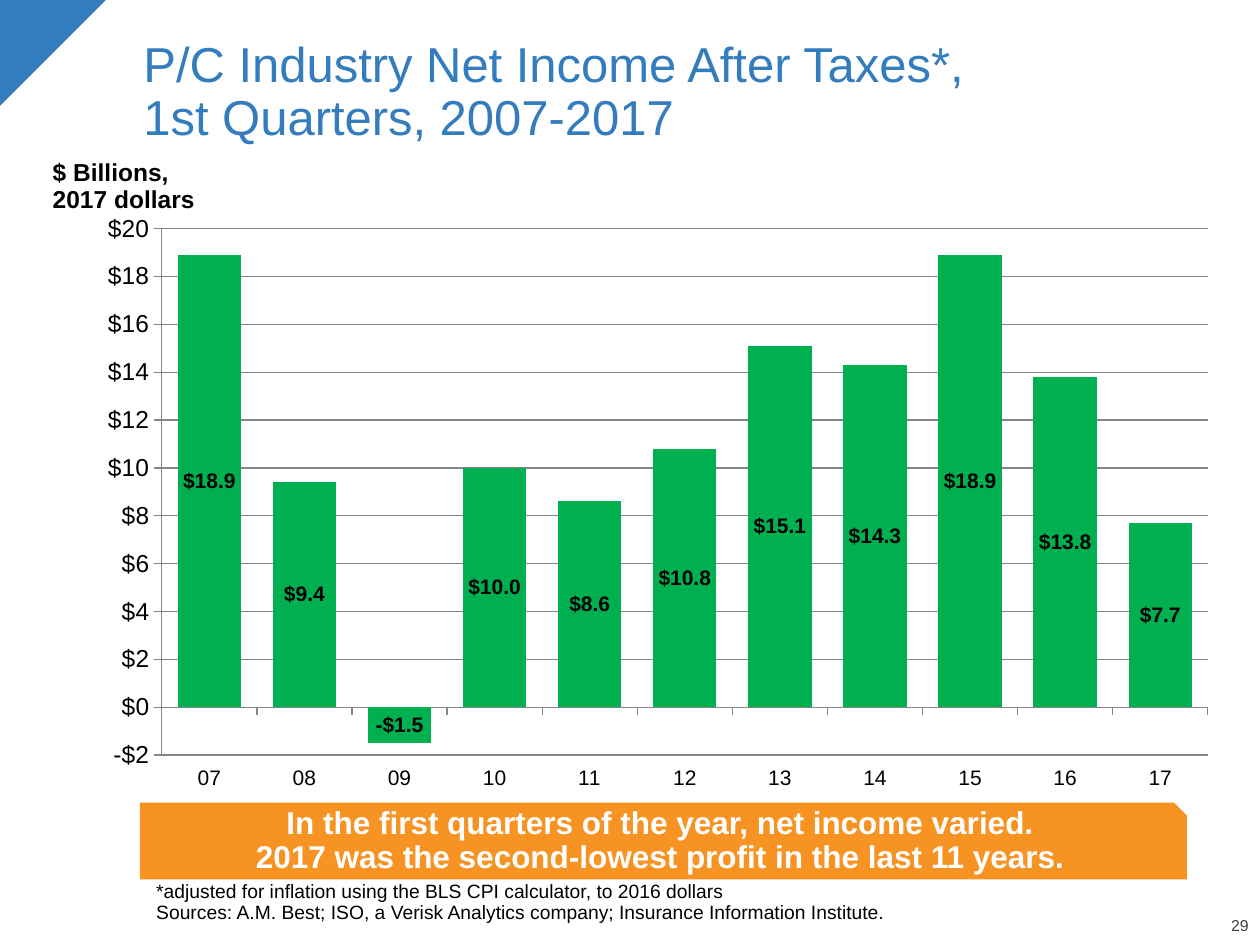
from lxml import etree
from pptx import Presentation
from pptx.chart.data import CategoryChartData
from pptx.dml.color import RGBColor
from pptx.enum.chart import XL_CHART_TYPE, XL_LABEL_POSITION, XL_TICK_LABEL_POSITION, XL_TICK_MARK
from pptx.enum.shapes import MSO_SHAPE
from pptx.enum.text import MSO_ANCHOR, PP_ALIGN
from pptx.oxml.ns import qn
from pptx.util import Pt

PX = 9144  # EMU in one px, 100 px to the inch
FONT = "Arial"

BLUE = RGBColor(0x33, 0x7D, 0xBE)
GREEN = RGBColor(0x00, 0xB0, 0x50)
ORANGE = RGBColor(0xF6, 0x93, 0x22)
BLACK = RGBColor(0x00, 0x00, 0x00)
WHITE = RGBColor(0xFF, 0xFF, 0xFF)
DARK_GRAY = RGBColor(0x40, 0x40, 0x40)
GRID_GRAY = RGBColor(0x86, 0x86, 0x86)

STACKED = XL_CHART_TYPE.COLUMN_STACKED
LABEL_CENTER = XL_LABEL_POSITION.CENTER
LABELS_LOW = XL_TICK_LABEL_POSITION.LOW
TICK_OUT, TICK_NONE = XL_TICK_MARK.OUTSIDE, XL_TICK_MARK.NONE
TRIANGLE, SNIPPED = MSO_SHAPE.RIGHT_TRIANGLE, MSO_SHAPE.SNIP_1_RECTANGLE
MIDDLE, BOTTOM = MSO_ANCHOR.MIDDLE, MSO_ANCHOR.BOTTOM
LEFT, CENTER, RIGHT = PP_ALIGN.LEFT, PP_ALIGN.CENTER, PP_ALIGN.RIGHT

YEARS = [f"{year:02d}" for year in range(7, 18)]
NET_INCOME = [18.9, 9.4, -1.5, 10.0, 8.6, 10.8, 15.1, 14.3, 18.9, 13.8, 7.7]
PLOT_LAYOUT = {"x": 0.103, "y": 0.028, "w": 0.887, "h": 0.867}


def emu(box):
    return [length * PX for length in box]


def set_text(shape, text, size, color, anchor, align=LEFT, bold=False, insets=(0, 0, 0, 0)):
    frame = shape.text_frame
    frame.word_wrap = True
    frame.vertical_anchor = anchor
    frame.margin_left, frame.margin_top, frame.margin_right, frame.margin_bottom = emu(insets)
    paragraph = frame.paragraphs[0]
    paragraph.text = text
    paragraph.alignment = align
    paragraph.line_spacing = 0.9
    font = paragraph.font
    font.name, font.size, font.bold = FONT, Pt(size), bold
    font.color.rgb = color


def add_text(slide, box, *args, **options):
    set_text(slide.shapes.add_textbox(*emu(box)), *args, **options)


def add_filled_shape(slide, kind, box, color):
    shape = slide.shapes.add_shape(kind, *emu(box))
    shape.shadow.inherit = False
    shape.fill.solid()
    shape.fill.fore_color.rgb = color
    shape.line.fill.background()
    return shape


def add_corner(slide, box):
    add_filled_shape(slide, TRIANGLE, box, BLUE).rotation = 90


def add_callout(slide, box, text):
    shape = add_filled_shape(slide, SNIPPED, box, ORANGE)
    set_text(shape, text, 18, WHITE, MIDDLE, CENTER, bold=True, insets=(10, 5, 10, 10))


def place_plot(chart):
    plot_area = chart.plots[0]._element.getparent()
    for layout in plot_area.findall(qn("c:layout")):
        plot_area.remove(layout)
    layout = etree.Element(qn("c:layout"))
    plot_area.insert(0, layout)
    manual = etree.SubElement(layout, qn("c:manualLayout"))
    settings = {"layoutTarget": "inner", "xMode": "edge", "yMode": "edge", **PLOT_LAYOUT}
    for name, value in settings.items():
        etree.SubElement(manual, qn(f"c:{name}")).set("val", str(value))


def add_income_chart(slide, box):
    data = CategoryChartData()
    data.categories = YEARS
    data.add_series("Series 1", NET_INCOME)
    chart = slide.shapes.add_chart(STACKED, *emu(box), data).chart
    chart.has_legend = chart.has_title = False
    chart.font.name, chart.font.size = FONT, Pt(12)
    chart.font.color.rgb = BLACK
    place_plot(chart)

    # Columns and their labels
    plot = chart.plots[0]
    plot.gap_width, plot.overlap = 50, 100
    plot.vary_by_categories = False
    series = plot.series[0]
    series.invert_if_negative = False
    series.format.fill.solid()
    series.format.fill.fore_color.rgb = GREEN
    labels = series.data_labels
    labels.show_value = True
    labels.position = LABEL_CENTER
    labels.number_format, labels.number_format_is_linked = '"$"#,##0.0', False
    labels.font.name, labels.font.size, labels.font.bold = FONT, Pt(12), True
    labels.font.color.rgb = BLACK

    # Axes
    years, dollars = chart.category_axis, chart.value_axis
    years.tick_label_position = LABELS_LOW
    dollars.minimum_scale, dollars.maximum_scale, dollars.major_unit = -2, 20, 2
    dollars.tick_labels.number_format = '"$"#,##0'
    dollars.tick_labels.number_format_is_linked = False
    dollars.tick_labels.font.size = Pt(14)
    dollars.has_major_gridlines = True
    for axis in (years, dollars):
        axis.major_tick_mark, axis.minor_tick_mark = TICK_OUT, TICK_NONE
    for line in (years.format.line, dollars.format.line, dollars.major_gridlines.format.line):
        line.color.rgb = GRID_GRAY
        line.width = Pt(0.75)


def main():
    presentation = Presentation()
    presentation.slide_width, presentation.slide_height = emu((1000, 750))
    slide = presentation.slides.add_slide(presentation.slide_layouts[6])

    # Corner, page number and title
    add_corner(slide, (0, 0, 84, 84))
    add_text(slide, (943, 729, 48, 13), "29", 9, DARK_GRAY, BOTTOM, RIGHT)
    add_text(slide, (104, 23, 864, 98),
             "P/C Industry Net Income After Taxes*,\v1st Quarters, 2007-2017",
             28, BLUE, BOTTOM, insets=(10, 5, 10, 5))

    # Footnote
    add_text(slide, (124, 688, 840, 45),
             "*adjusted for inflation using the BLS CPI calculator, to 2016 dollars\v"
             "Sources: A.M. Best; ISO, a Verisk Analytics company; Insurance Information Institute.",
             11, BLACK, BOTTOM)

    # Chart with its unit and message
    add_income_chart(slide, (32, 168, 936, 482))
    add_callout(slide, (111, 637, 831, 61),
                "In the first quarters of the year, net income varied.\v"
                "2017 was the second-lowest profit in the last 11 years.")
    add_text(slide, (32, 122, 132, 53), "$ Billions,\v2017 dollars",
             14, BLACK, MIDDLE, bold=True, insets=(10, 5, 0, 5))

    presentation.save("out.pptx")


if __name__ == "__main__":
    main()
